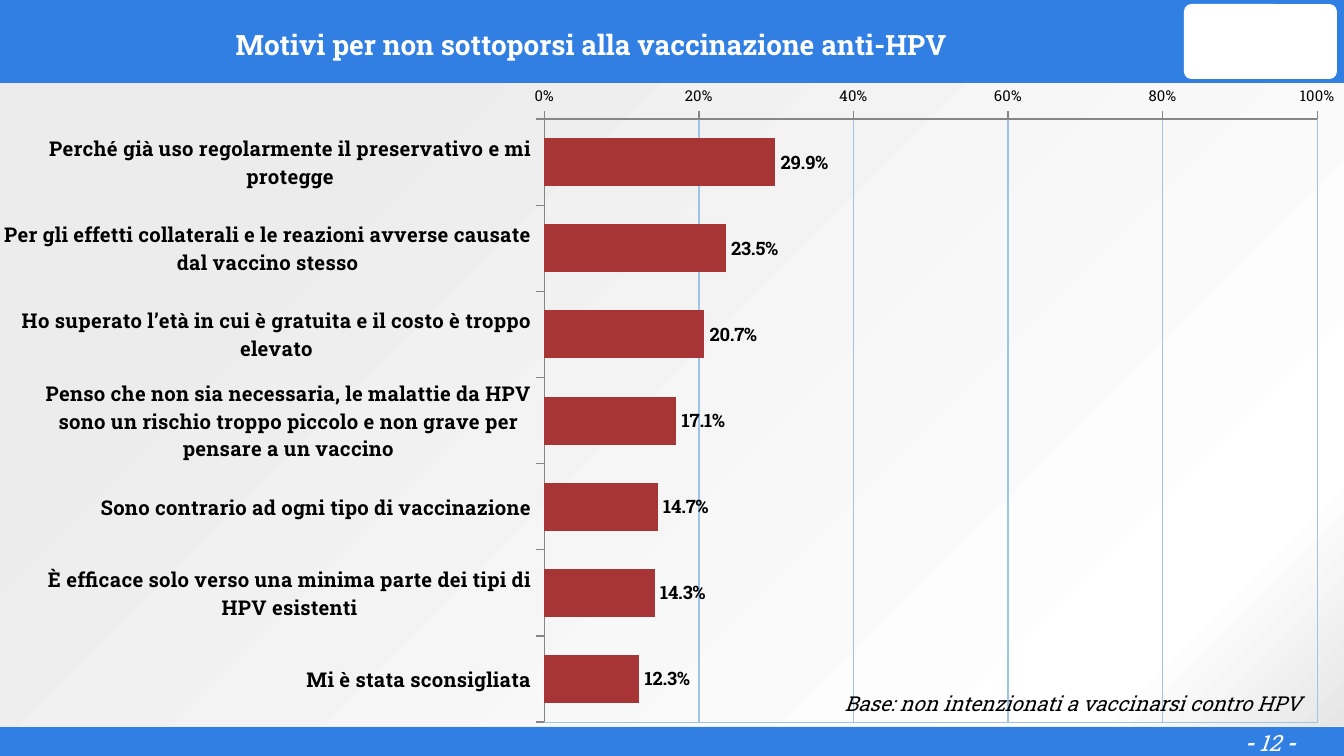
from dataclasses import dataclass

from pptx import Presentation
from pptx import util as u
from pptx.chart import data as chart_data
from pptx.dml.color import RGBColor
from pptx.enum import chart as ce, shapes, text
from pptx.oxml import parse_xml
from pptx.oxml.ns import nsdecls, qn

PX = 9144000 / 1344


@dataclass(frozen=True)
class Theme:
    font: str = "Roboto Slab"
    blue: str = "317FE3"
    white: str = "FFFFFF"
    ink: str = "000000"
    bar: str = "A83535"
    grid: str = "9DC3E6"
    axis: str = "868686"
    backdrop: tuple = ((0, "E6E6E6"), (13, "FFFFFF"), (82, "ECECEC"))
    title: int = 15
    number: int = 12
    category: int = 11
    note: int = 11
    value: int = 10
    scale: int = 8


T = Theme()

REASONS = [
    ("Perché già uso regolarmente il preservativo e mi protegge", 0.299),
    ("Per gli effetti collaterali e le reazioni avverse causate dal vaccino stesso", 0.235),
    ("Ho superato l’età in cui è gratuita e il costo è troppo elevato", 0.207),
    ("Penso che non sia necessaria, le malattie da HPV sono un rischio troppo "
     "piccolo e non grave per pensare a un vaccino", 0.171),
    ("Sono contrario ad ogni tipo di vaccinazione", 0.147),
    ("È efficace solo verso una minima parte dei tipi di HPV esistenti", 0.143),
    ("Mi è stata sconsigliata", 0.123),
]


def emu(*px):
    return [u.Emu(round(v * PX)) for v in px]


def rgb(color):
    return RGBColor.from_string(color)


def style(font, size, color=T.ink, bold=False, italic=False):
    font.name, font.size = T.font, u.Pt(size)
    font.bold, font.italic = bold, italic
    font.color.rgb = rgb(color)


def add_panel(slide, box, color, kind=shapes.MSO_SHAPE.RECTANGLE):
    sp = slide.shapes.add_shape(kind, *emu(*box))
    sp.shadow.inherit = False
    sp.fill.solid()
    sp.fill.fore_color.rgb = rgb(color)
    sp.line.fill.background()
    return sp


def add_text(slide, box, runs, align, size, color, inset=None):
    """One line of text; runs are (wording, bold, italic)."""
    tf = slide.shapes.add_textbox(*emu(*box)).text_frame
    tf.word_wrap = True
    tf.vertical_anchor = text.MSO_ANCHOR.MIDDLE
    if inset is not None:
        side, = emu(inset)
        tf.margin_left = tf.margin_right = tf.margin_top = tf.margin_bottom = side
    p = tf.paragraphs[0]
    p.alignment = align
    for wording, bold, italic in runs:
        r = p.add_run()
        r.text = wording
        style(r.font, size, color, bold, italic)
    return p


def add_backdrop(slide, box):
    """Panel shaded outwards from its bottom right corner."""
    sp = add_panel(slide, box, T.white)
    stops = "".join(f'<a:gs pos="{pos * 1000}"><a:srgbClr val="{color}"/></a:gs>'
                    for pos, color in T.backdrop)
    solid = sp.element.spPr.find(qn("a:solidFill"))
    solid.getparent().replace(solid, parse_xml(
        f'<a:gradFill {nsdecls("a")} rotWithShape="1"><a:gsLst>{stops}</a:gsLst>'
        '<a:path path="circle"><a:fillToRect l="100000" t="100000"/></a:path>'
        '</a:gradFill>'))


def add_header(slide, box, title):
    x, y, w, h = box
    add_panel(slide, box, T.blue)
    badge = add_panel(slide, (x + w - 160, y + 4, 153, 75), T.white,
                      shapes.MSO_SHAPE.ROUNDED_RECTANGLE)
    badge.adjustments[0] = 0.1
    p = add_text(slide, (x + 9, y + 3, 1165, h - 4), [(title, True, False)],
                 text.PP_ALIGN.CENTER, T.title, T.white)
    p.line_spacing = u.Pt(20)


def add_footer(slide, box, number):
    x, y, w, h = box
    add_panel(slide, box, T.blue)
    add_text(slide, (x + w - 143, y + 4, 138, 23),
             [("- ", True, True), (number, False, True), (" -", True, True)],
             text.PP_ALIGN.CENTER, T.number, T.white, inset=5)


def set_plot_area(chart, x, y, w, h):
    """Fix the inner plot area, in fractions of the chart, and frame it."""
    area = chart.element.find(".//" + qn("c:plotArea"))
    for old in area.findall(qn("c:layout")):
        area.remove(old)
    sizes = "".join(f'<c:{tag} val="{val}"/>' for tag, val in zip("xywh", (x, y, w, h)))
    area.insert(0, parse_xml(
        f'<c:layout {nsdecls("c")}><c:manualLayout><c:layoutTarget val="inner"/>'
        f'<c:xMode val="edge"/><c:yMode val="edge"/>{sizes}'
        '</c:manualLayout></c:layout>'))
    area.append(parse_xml(
        f'<c:spPr {nsdecls("c", "a")}><a:noFill/><a:ln w="9525"><a:solidFill>'
        f'<a:srgbClr val="{T.grid}"/></a:solidFill></a:ln></c:spPr>'))


def set_axis(axis, size, bold=False):
    axis.major_tick_mark = ce.XL_TICK_MARK.OUTSIDE
    axis.minor_tick_mark = ce.XL_TICK_MARK.NONE
    axis.format.line.color.rgb = rgb(T.axis)
    axis.format.line.width = u.Pt(0.75)
    style(axis.tick_labels.font, size, bold=bold)


def add_reasons_chart(slide, box, reasons):
    data = chart_data.CategoryChartData(number_format="0.0%")
    data.categories = [reason for reason, _ in reasons]
    data.add_series("Series 1", [share for _, share in reasons])
    chart = slide.shapes.add_chart(ce.XL_CHART_TYPE.BAR_CLUSTERED, *emu(*box), data).chart
    chart.has_legend = chart.has_title = False
    style(chart.font, T.value)

    set_axis(chart.category_axis, T.category, bold=True)
    chart.category_axis.reverse_order = True
    scale = chart.value_axis
    set_axis(scale, T.scale)
    scale.minimum_scale, scale.maximum_scale, scale.major_unit = 0, 1, 0.2
    scale.tick_labels.number_format = "0%"
    scale.tick_labels.number_format_is_linked = False
    scale.has_major_gridlines = True
    scale.major_gridlines.format.line.color.rgb = rgb(T.grid)
    scale.major_gridlines.format.line.width = u.Pt(0.75)

    plot = chart.plots[0]
    plot.gap_width = 80
    plot.vary_by_categories = False
    bars = plot.series[0]
    bars.format.fill.solid()
    bars.format.fill.fore_color.rgb = rgb(T.bar)
    labels = bars.data_labels
    labels.show_value = True
    labels.number_format = "0.0%"
    labels.number_format_is_linked = False
    labels.position = ce.XL_LABEL_POSITION.OUTSIDE_END
    style(labels.font, T.value, bold=True)
    set_plot_area(chart, 0.4, 0.05, 0.58, 0.95)


def main():
    prs = Presentation()
    prs.slide_width, prs.slide_height = emu(1344, 756)
    slide = prs.slides.add_slide(prs.slide_layouts[6])
    add_backdrop(slide, (0, 83, 1344, 643))
    add_header(slide, (0, 0, 1344, 83), "Motivi per non sottoporsi alla vaccinazione anti-HPV")
    add_footer(slide, (0, 727, 1344, 29), "12")
    add_reasons_chart(slide, (4, 85, 1340, 638), REASONS)
    add_text(slide, (820, 684, 495, 39),
             [("Base: non intenzionati a vaccinarsi contro HPV", False, True)],
             text.PP_ALIGN.RIGHT, T.note, T.ink)
    prs.save("out.pptx")


if __name__ == "__main__":
    main()
